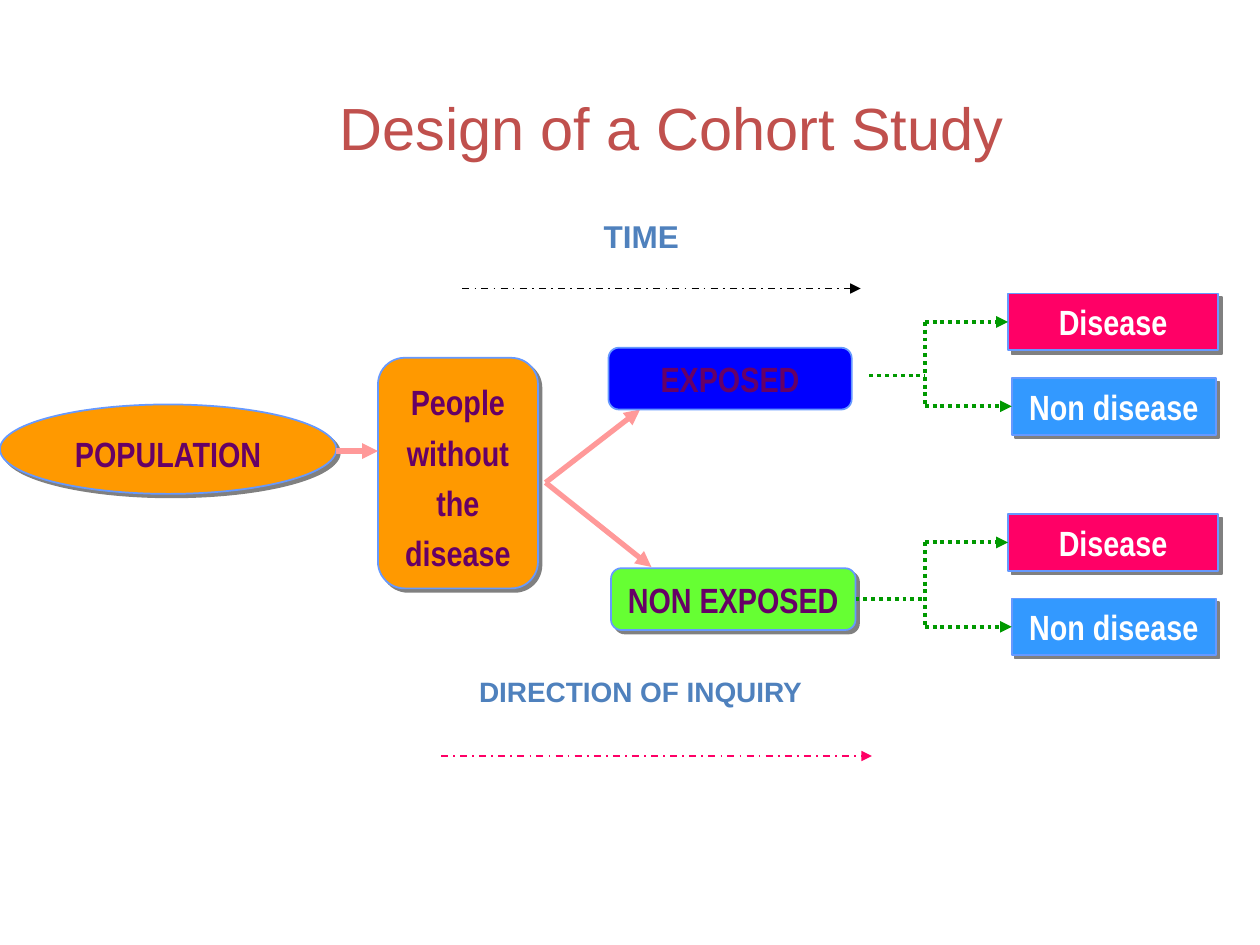
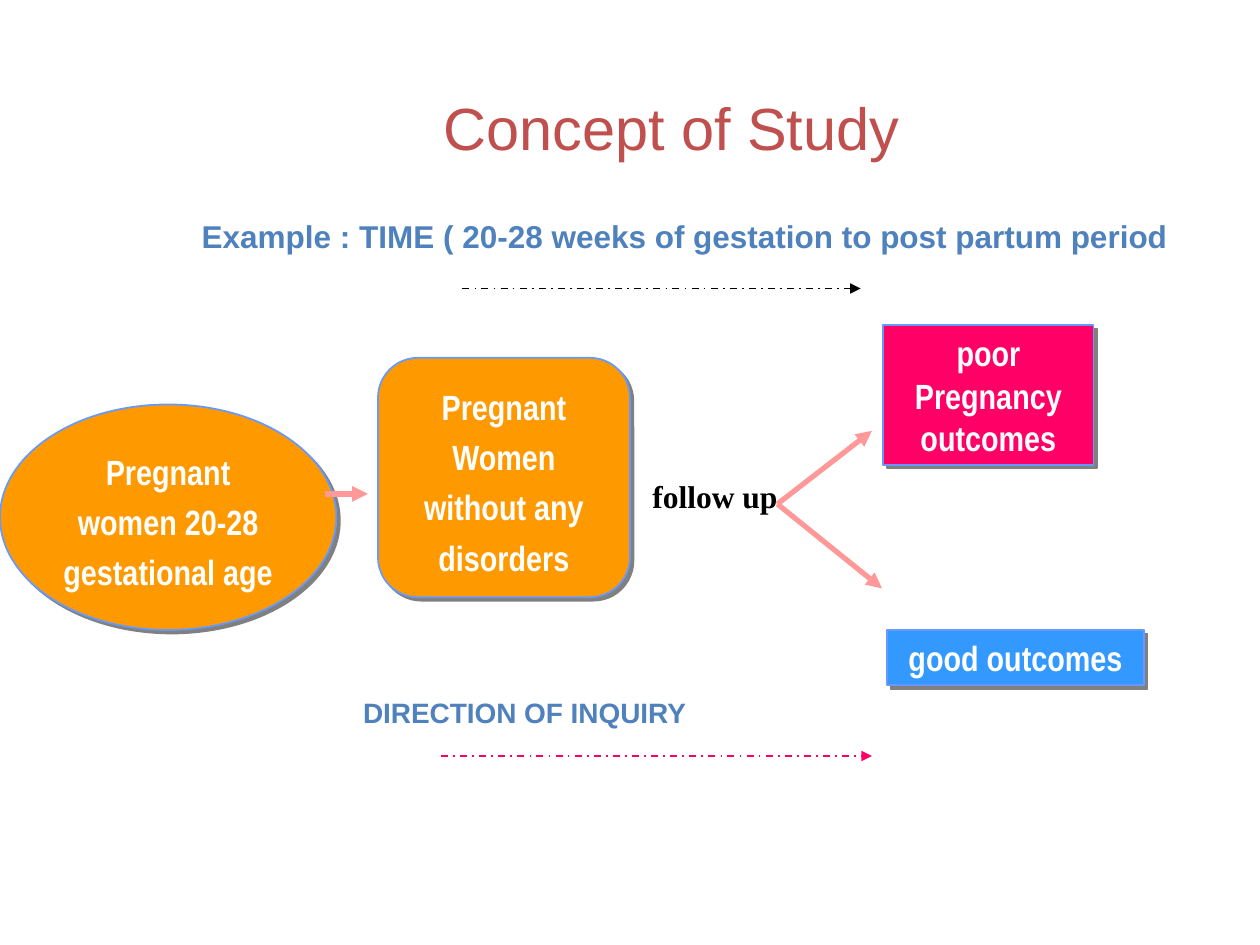
import dataclasses

import lxml.etree
import pptx
import pptx.dml.color
import pptx.enum.dml
import pptx.enum.shapes
import pptx.enum.text
import pptx.oxml.ns
import pptx.util

SHAPE = pptx.enum.shapes.MSO_SHAPE
DASH = pptx.enum.dml.MSO_LINE
ALIGN = pptx.enum.text.PP_ALIGN
ANCHOR = pptx.enum.text.MSO_ANCHOR
qn = pptx.oxml.ns.qn

PX = 9144  # EMU in one px, 100 px to the inch
LEFT, RIGHT = 1, 3  # connection sites of a rectangle


@dataclasses.dataclass(frozen=True)
class Theme:
    title: str = "C0504D"
    label: str = "4F81BD"
    black: str = "000000"
    white: str = "FFFFFF"
    plum: str = "660066"
    orange: str = "FF9900"
    blue: str = "0000FF"
    lime: str = "66FF33"
    pink: str = "FF0066"
    sky: str = "3399FF"
    outline: str = "6699FF"
    shadow: str = "808080"
    salmon: str = "FF9999"
    green: str = "009900"
    heading_font: str = "Arial"
    box_font: str = "Arial Narrow"
    note_font: str = "Times New Roman"
    title_size: int = 34
    time_size: int = 18
    inquiry_size: int = 16
    box_size: int = 20


THEME = Theme()

# Places are (left, top, width, height); ends are (x, y).
TITLE_PLACE = (83, 67, 900, 67)
TIME_ARROW = ((367, 229), (683, 229))
INQUIRY_ARROW = ((350, 600), (692, 600))
INQUIRY = "DIRECTION OF INQUIRY"

COHORT = {
    "title": "Design of a Cohort Study",
    "time": ("TIME", (469, 167, 80, 40)),
    "inquiry": (350, 530, 317, 37),
    "population": ("POPULATION", (0, 321, 267, 71)),
    "sample": ("People without the disease", (300, 284, 127, 183)),
    "ink": THEME.plum,
    "to_sample": ((267, 358), (300, 358)),
    "fork": ((433, 383), [(508, 325), (517, 450)]),
}
CONCEPT = {
    "title": "Concept of Study",
    "time": ("Example : TIME ( 20-28 weeks of gestation to post partum period",
             (150, 167, 787, 40)),
    "inquiry": (258, 547, 317, 37),
    "population": ("Pregnant women 20-28 gestational age", (0, 321, 267, 179)),
    "sample": ("Pregnant Women without any disorders", (300, 284, 200, 190)),
    "ink": THEME.white,
    "to_sample": ((258, 392), (292, 392)),
    "fork": ((617, 400), [(692, 342), (700, 467)]),
}
EXPOSED = ("EXPOSED", (483, 276, 193, 49))
NON_EXPOSED = ("NON EXPOSED", (485, 451, 194, 49))
OUTCOMES = [  # text, fill, left, width
    ("Disease", THEME.pink, 800, 167),
    ("Non disease", THEME.sky, 803, 162),
]
OUTCOME_HEIGHT, OUTCOME_PITCH = 45, 67
EXPOSED_OUTCOMES_TOP, NON_EXPOSED_OUTCOMES_TOP = 233, 408
EXPOSED_STEM = (690, 298)
TRUNK_X = 734
POOR = ("poor Pregnancy outcomes", (701, 258, 167, 111))
GOOD = ("good outcomes", (704, 500, 204, 44))
FOLLOW_UP = ("follow up", (508, 374, 120, 40))


def emu(*lengths):
    return [pptx.util.Emu(round(length * PX)) for length in lengths]


def rgb(color):
    return pptx.dml.color.RGBColor.from_string(color)


def write(frame, text, *, size, color, font, bold=True, align=ALIGN.CENTER,
          anchor=ANCHOR.MIDDLE, wrap=True, leading=None, gap=None):
    frame.auto_size = pptx.enum.text.MSO_AUTO_SIZE.NONE
    frame.word_wrap = wrap
    frame.vertical_anchor = anchor
    paragraph = frame.paragraphs[0]
    paragraph.alignment = align
    if leading:
        paragraph.line_spacing = leading
    if gap:
        paragraph.space_before = paragraph.space_after = pptx.util.Pt(gap)
    run = paragraph.add_run()
    run.text = text
    run.font.size = pptx.util.Pt(size)
    run.font.name = font
    run.font.bold = bold
    run.font.color.rgb = rgb(color)


def add_label(slide, text, place, **style):
    write(slide.shapes.add_textbox(*emu(*place)).text_frame, text, **style)


def add_box(slide, kind, text, place, fill, ink=THEME.white, shadow=True, **style):
    box = slide.shapes.add_shape(kind, *emu(*place))
    box.fill.solid()
    box.fill.fore_color.rgb = rgb(fill)
    box.line.color.rgb = rgb(THEME.outline)
    box.line.width = pptx.util.Pt(1)
    box.shadow.inherit = False
    if shadow:
        cast_shadow(box)
    write(box.text_frame, text, size=THEME.box_size, color=ink,
          font=THEME.box_font, **style)
    return box


def cast_shadow(box):
    effects = box._element.spPr.find(qn("a:effectLst"))
    drop = lxml.etree.SubElement(effects, qn("a:outerShdw"), dist="35921",
                                 dir="2700000", algn="ctr", rotWithShape="0")
    lxml.etree.SubElement(drop, qn("a:srgbClr"), val=THEME.shadow)


def add_line(slide, start, end, color, width, dash=None, arrow=True):
    line = slide.shapes.add_connector(
        pptx.enum.shapes.MSO_CONNECTOR.STRAIGHT, *emu(*start, *end))
    line.line.color.rgb = rgb(color)
    line.line.width = pptx.util.Pt(width)
    if dash:
        line.line.dash_style = dash
    if arrow:
        lxml.etree.SubElement(line.line._get_or_add_ln(), qn("a:tailEnd"),
                              type="triangle")
    lxml.etree.SubElement(line._element.spPr, qn("a:effectLst"))
    return line


def add_outcomes(slide, top, stem, source=None):
    """Draw both outcome boxes and the dotted tree that leads to them."""
    dotted = {"color": THEME.green, "width": 2.25, "dash": DASH.ROUND_DOT}
    middles = []
    for row, (text, fill, left, width) in enumerate(OUTCOMES):
        box_top = top + row * OUTCOME_PITCH
        middle = box_top + OUTCOME_HEIGHT / 2
        box = add_box(slide, SHAPE.RECTANGLE, text,
                      (left, box_top, width, OUTCOME_HEIGHT), fill, wrap=False)
        branch = add_line(slide, (TRUNK_X, middle), (left, middle), **dotted)
        branch.end_connect(box, LEFT)
        middles.append(middle)
    add_line(slide, (TRUNK_X, middles[0]), (TRUNK_X, middles[1]), arrow=False, **dotted)
    trunk = add_line(slide, stem, (TRUNK_X, stem[1]), arrow=False, **dotted)
    if source:
        trunk.begin_connect(source, RIGHT)


def add_study(deck, study):
    """Add a slide with the parts that both studies share."""
    slide = deck.slides.add_slide(deck.slide_layouts.get_by_name("Title Only"))
    title = slide.shapes.title
    title.left, title.top, title.width, title.height = emu(*TITLE_PLACE)
    write(title.text_frame, study["title"], size=THEME.title_size,
          color=THEME.title, font=THEME.heading_font, bold=False)

    heading = {"color": THEME.label, "font": THEME.heading_font}
    add_label(slide, *study["time"], size=THEME.time_size, wrap=False, **heading)
    add_label(slide, INQUIRY, study["inquiry"], size=THEME.inquiry_size, **heading)
    add_line(slide, *TIME_ARROW, THEME.black, 1, DASH.DASH_DOT)
    add_line(slide, *INQUIRY_ARROW, THEME.pink, 1, DASH.DASH_DOT)

    for kind, part in ((SHAPE.OVAL, "population"), (SHAPE.ROUNDED_RECTANGLE, "sample")):
        add_box(slide, kind, *study[part], THEME.orange, study["ink"],
                leading=1.2, gap=11)

    add_line(slide, *study["to_sample"], THEME.salmon, 3)
    fork, tips = study["fork"]
    for tip in tips:
        add_line(slide, fork, tip, THEME.salmon, 3)
    return slide


def add_cohort(deck):
    slide = add_study(deck, COHORT)
    add_box(slide, SHAPE.ROUNDED_RECTANGLE, *EXPOSED, THEME.blue, THEME.plum,
            shadow=False, wrap=False)
    non_exposed = add_box(slide, SHAPE.ROUNDED_RECTANGLE, *NON_EXPOSED,
                          THEME.lime, THEME.plum, wrap=False)
    left, top, width, height = NON_EXPOSED[1]
    add_outcomes(slide, EXPOSED_OUTCOMES_TOP, EXPOSED_STEM)
    add_outcomes(slide, NON_EXPOSED_OUTCOMES_TOP,
                 (left + width, top + height / 2), non_exposed)


def add_concept(deck):
    slide = add_study(deck, CONCEPT)
    add_box(slide, SHAPE.RECTANGLE, *POOR, THEME.pink)
    add_box(slide, SHAPE.RECTANGLE, *GOOD, THEME.sky, wrap=False)
    add_label(slide, *FOLLOW_UP, size=THEME.time_size, color=THEME.black,
              font=THEME.note_font, align=ALIGN.LEFT, anchor=ANCHOR.TOP, wrap=False)


def main():
    deck = pptx.Presentation()
    deck.slide_width, deck.slide_height = emu(1000, 750)
    add_cohort(deck)
    add_concept(deck)
    deck.save("out.pptx")


if __name__ == "__main__":
    main()
